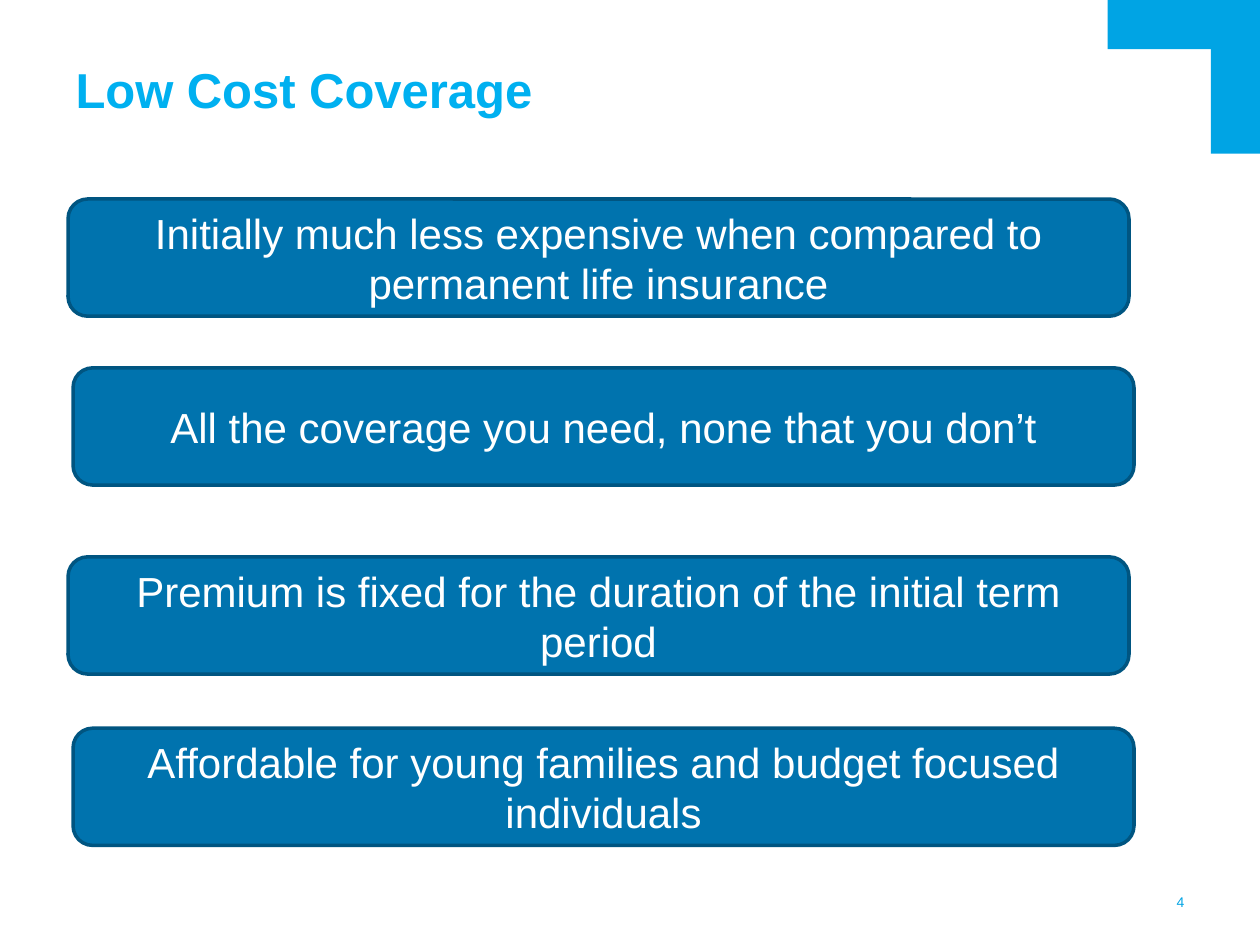
"""Build the Low Cost Coverage slide with four benefit banners."""
import dataclasses

import pptx
import pptx.dml.color
import pptx.enum.shapes
import pptx.enum.text
import pptx.shapes.autoshape
import pptx.slide
import pptx.util

Inches = pptx.util.Inches
Pt = pptx.util.Pt
Color = pptx.dml.color.RGBColor
Shape = pptx.enum.shapes.MSO_SHAPE
Align = pptx.enum.text.PP_ALIGN
Anchor = pptx.enum.text.MSO_ANCHOR


@dataclasses.dataclass(frozen=True)
class Theme:
    font: str = "Arial"
    title_color: Color = Color(0x00, 0xB0, 0xF0)
    accent: Color = Color(0x00, 0xA4, 0xE4)
    banner_fill: Color = Color(0x00, 0x73, 0xAE)
    banner_line: Color = Color(0x00, 0x55, 0x81)
    banner_text: Color = Color(0xFF, 0xFF, 0xFF)
    title_size: Pt = Pt(28)
    banner_size: Pt = Pt(24)
    number_size: Pt = Pt(8)
    line_width: Pt = Pt(2)


@dataclasses.dataclass(frozen=True)
class Area:
    left: float
    top: float
    width: float
    height: float

    def lengths(self) -> tuple[Inches, ...]:
        return tuple(Inches(value) for value in dataclasses.astuple(self))


@dataclasses.dataclass(frozen=True)
class Banner:
    text: str
    left: float
    top: float


THEME = Theme()
BANNER_WIDTH, BANNER_HEIGHT = 8.42, 0.93
BANNERS = (
    Banner("Initially much less expensive when compared to permanent life insurance", 0.54, 1.58),
    Banner("All the coverage you need, none that you don’t", 0.58, 2.92),
    Banner("Premium is fixed for the duration of the initial term period", 0.54, 4.42),
    Banner("Affordable for young families and budget focused individuals", 0.58, 5.78),
)
CORNER_BARS = (Area(8.79, 0, 1.21, 0.39), Area(9.61, 0, 0.39, 1.22))


def write_text(box: pptx.shapes.autoshape.Shape, text: str, *, size: Pt, color: Color,
               align: Align = Align.LEFT, anchor: Anchor = Anchor.MIDDLE,
               bold: bool = False) -> None:
    frame = box.text_frame
    frame.word_wrap = True
    frame.vertical_anchor = anchor
    para = frame.paragraphs[0]
    para.alignment = align
    span = para.add_run()
    span.text = text
    span.font.name = THEME.font
    span.font.size = size
    span.font.bold = bold
    span.font.color.rgb = color


def add_label(page: pptx.slide.Slide, area: Area, text: str, **text_format) -> None:
    box = page.shapes.add_textbox(*area.lengths())
    frame = box.text_frame
    frame.margin_left = frame.margin_right = frame.margin_top = frame.margin_bottom = Inches(0)
    write_text(box, text, **text_format)


def add_filled(page: pptx.slide.Slide, kind: Shape, area: Area,
               fill: Color) -> pptx.shapes.autoshape.Shape:
    box = page.shapes.add_shape(kind, *area.lengths())
    box.shadow.inherit = False
    box.fill.solid()
    box.fill.fore_color.rgb = fill
    box.line.fill.background()
    return box


def add_banner(page: pptx.slide.Slide, banner: Banner) -> None:
    area = Area(banner.left, banner.top, BANNER_WIDTH, BANNER_HEIGHT)
    box = add_filled(page, Shape.ROUNDED_RECTANGLE, area, THEME.banner_fill)
    box.line.color.rgb = THEME.banner_line
    box.line.width = THEME.line_width
    write_text(box, banner.text, size=THEME.banner_size, color=THEME.banner_text,
               align=Align.CENTER)


def main() -> None:
    deck = pptx.Presentation()
    deck.slide_width, deck.slide_height = Inches(10), Inches(7.5)
    page = deck.slides.add_slide(deck.slide_layouts[6])
    add_label(page, Area(9.09, 7.09, 0.31, 0.14), "4", size=THEME.number_size,
              color=THEME.accent, align=Align.RIGHT)
    for bar in CORNER_BARS:
        add_filled(page, Shape.RECTANGLE, bar, THEME.accent)
    add_label(page, Area(0.6, 0.6, 8.8, 0.34), "Low Cost Coverage", size=THEME.title_size,
              color=THEME.title_color, anchor=Anchor.BOTTOM, bold=True)
    for banner in BANNERS:
        add_banner(page, banner)
    deck.save("out.pptx")


if __name__ == "__main__":
    main()
